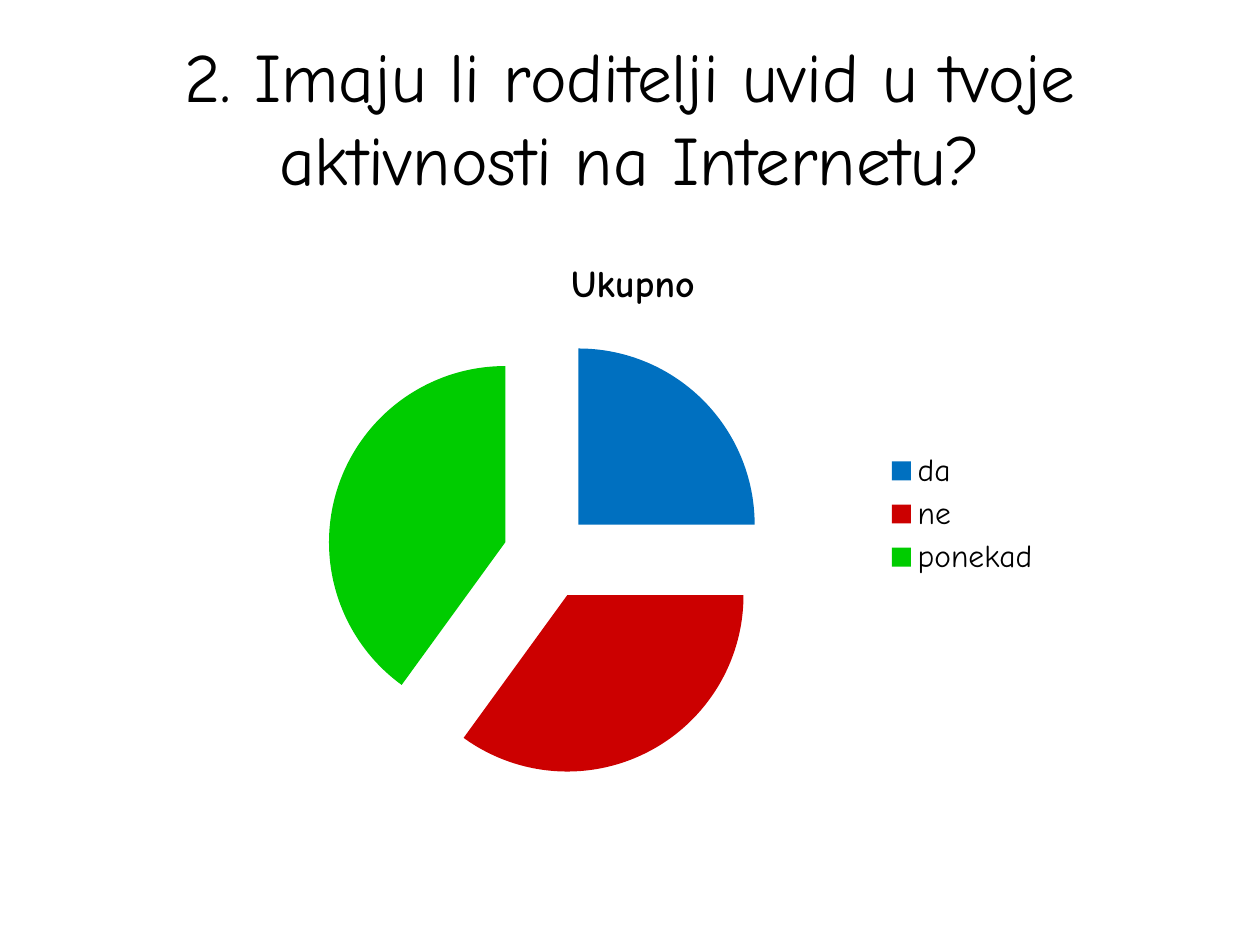
"""Build a survey slide with a title and an exploded pie chart."""
import pptx
import pptx.chart.data
import pptx.dml.color
import pptx.enum.chart
import pptx.enum.text
import pptx.util
from pptx.util import Inches

BLACK = pptx.dml.color.RGBColor(0x00, 0x00, 0x00)
BLUE = pptx.dml.color.RGBColor(0x00, 0x70, 0xC0)
RED = pptx.dml.color.RGBColor(0xCC, 0x00, 0x00)
GREEN = pptx.dml.color.RGBColor(0x00, 0xCC, 0x00)


class SurveySlide:
    def __init__(self, prs, font="Comic Neue", color=BLACK):
        self.font = font
        self.color = color
        self.s = prs.slides.add_slide(prs.slide_layouts[5])

    def style(self, font, size, bold=False):
        font.name = self.font
        font.size = pptx.util.Pt(size)
        font.bold = bold
        font.color.rgb = self.color

    def title(self, text, left, top, width, height, size):
        sp = self.s.shapes.title
        sp.left, sp.top = Inches(left), Inches(top)
        sp.width, sp.height = Inches(width), Inches(height)
        tf = sp.text_frame
        tf.word_wrap = True
        tf.auto_size = pptx.enum.text.MSO_AUTO_SIZE.NONE
        tf.vertical_anchor = pptx.enum.text.MSO_ANCHOR.MIDDLE
        p = tf.paragraphs[0]
        p.alignment = pptx.enum.text.PP_ALIGN.CENTER
        r = p.add_run()
        r.text = text
        self.style(r.font, size)

    def pie(self, name, slices, left, top, width, height, size):
        data = pptx.chart.data.CategoryChartData()
        data.categories = [label for label, _, _ in slices]
        data.add_series(name, [value for _, value, _ in slices])
        chart = self.s.shapes.add_chart(
            pptx.enum.chart.XL_CHART_TYPE.PIE_EXPLODED,
            Inches(left), Inches(top), Inches(width), Inches(height), data,
        ).chart
        chart.font.name = "Calibri"
        chart.font.size = pptx.util.Pt(size)
        chart.font.color.rgb = self.color

        chart.has_title = True
        p = chart.chart_title.text_frame.paragraphs[0]
        r = p.add_run()
        r.text = name
        self.style(r.font, size * 1.2, bold=True)

        chart.has_legend = True
        chart.legend.position = pptx.enum.chart.XL_LEGEND_POSITION.RIGHT
        chart.legend.include_in_layout = False
        self.style(chart.legend.font, size)

        plot = chart.plots[0]
        plot.vary_by_categories = True
        for i, (_, _, color) in enumerate(slices):
            fill = plot.series[0].points[i].format.fill
            fill.solid()
            fill.fore_color.rgb = color


def main():
    prs = pptx.Presentation()
    prs.slide_width, prs.slide_height = Inches(10), Inches(7.5)
    survey = SurveySlide(prs)
    survey.title("2. Imaju li roditelji uvid u tvoje aktivnosti na Internetu?",
                 0.5, 0.3, 9, 1.25, 39.6)
    answers = [("da", 25, BLUE), ("ne", 35, RED), ("ponekad", 40, GREEN)]
    survey.pie("Ukupno", answers, 1.69, 1.86, 6.67, 4.44, 18)
    prs.save("out.pptx")


if __name__ == "__main__":
    main()
